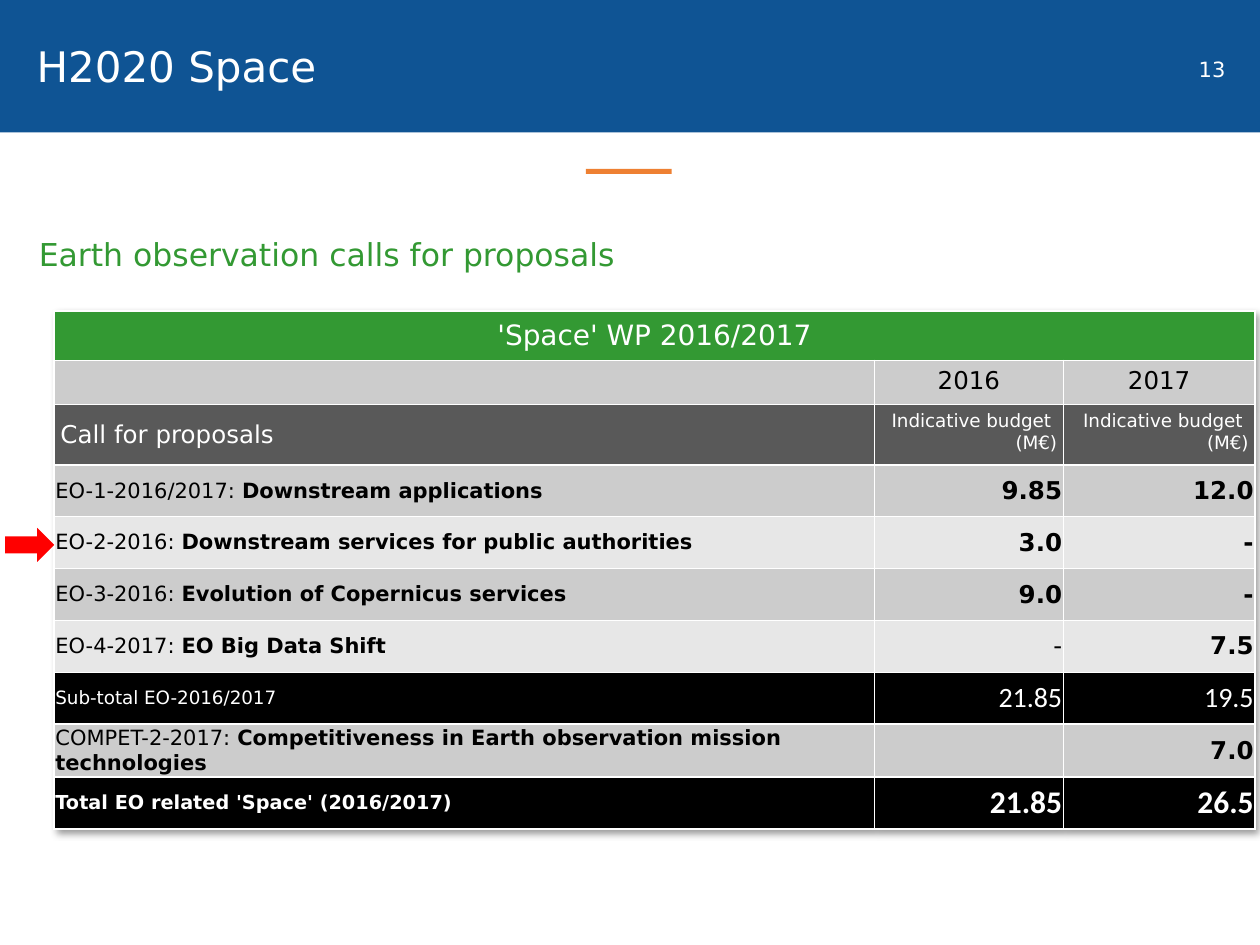
from dataclasses import dataclass

from lxml import etree
from pptx import Presentation
from pptx.dml.color import RGBColor
from pptx.enum.shapes import MSO_SHAPE
from pptx.enum.text import MSO_ANCHOR, PP_ALIGN
from pptx.oxml import parse_xml
from pptx.oxml.ns import nsdecls, qn
from pptx.util import Inches, Pt

LEFT, CENTER, RIGHT = PP_ALIGN.LEFT, PP_ALIGN.CENTER, PP_ALIGN.RIGHT
TOP, MIDDLE = MSO_ANCHOR.TOP, MSO_ANCHOR.MIDDLE
RECTANGLE, RIGHT_ARROW = MSO_SHAPE.RECTANGLE, MSO_SHAPE.RIGHT_ARROW

BLUE = RGBColor(0x0F, 0x54, 0x94)
ORANGE = RGBColor(0xEE, 0x80, 0x32)
GREEN = RGBColor(0x33, 0x99, 0x33)
RED = RGBColor(0xFF, 0x00, 0x00)
WHITE = RGBColor(0xFF, 0xFF, 0xFF)
BLACK = RGBColor(0x00, 0x00, 0x00)
DARK_GRAY = RGBColor(0x59, 0x59, 0x59)
MID_GRAY = RGBColor(0xCC, 0xCC, 0xCC)
LIGHT_GRAY = RGBColor(0xE7, 0xE7, 0xE7)

BODY_FONT = "DejaVu Sans"
NUMBER_FONT = "Calibri"
TABLE_HEIGHT = 4.1
HEADER_HEIGHTS = [0.39, 0.35, 0.48]
COLUMN_WIDTHS = [6.51, 1.5, 1.52]


@dataclass(frozen=True)
class Style:
    size: float
    color: RGBColor = BLACK
    bold: bool = False
    font: str = BODY_FONT


@dataclass(frozen=True)
class CellText:
    lines: tuple[tuple[tuple[str, Style], ...], ...] = ()
    align: PP_ALIGN = LEFT
    anchor: MSO_ANCHOR = MIDDLE
    margin: float = 0.01


@dataclass(frozen=True)
class TableRow:
    fill: RGBColor
    cells: tuple[CellText, ...]


PLAIN = Style(12)
STRONG = Style(12, bold=True)
VALUE = Style(14, bold=True)
SUBTOTAL = Style(16, WHITE, font=NUMBER_FONT)
TOTAL = Style(18, WHITE, True, NUMBER_FONT)


def header(text: str, style: Style, align: PP_ALIGN, anchor: MSO_ANCHOR = TOP) -> CellText:
    lines = tuple(((line, style),) for line in text.split("\n"))
    return CellText(lines, align, anchor, 0.05)


def label(*runs: tuple[str, Style]) -> CellText:
    return CellText((runs,))


def number(text: str, style: Style = VALUE) -> CellText:
    return CellText((((text, style),),), RIGHT)


def call(code: str, topic: str) -> CellText:
    return label((f"{code}: ", PLAIN), (topic, STRONG))


BUDGET = header("Indicative budget \n(M€)", Style(10.5, WHITE), RIGHT)
ROWS = [
    TableRow(GREEN, (header("'Space' WP 2016/2017", Style(16, WHITE), CENTER, MIDDLE),
                     CellText(), CellText())),
    TableRow(MID_GRAY, (CellText(), header("2016", Style(14), CENTER),
                        header("2017", Style(14), CENTER))),
    TableRow(DARK_GRAY, (header("Call for proposals", Style(14, WHITE), LEFT, MIDDLE),
                         BUDGET, BUDGET)),
    TableRow(MID_GRAY, (call("EO-1-2016/2017", "Downstream applications"),
                        number("9.85"), number("12.0"))),
    TableRow(LIGHT_GRAY, (call("EO-2-2016", "Downstream services for public authorities"),
                          number("3.0"), number("-"))),
    TableRow(MID_GRAY, (call("EO-3-2016", "Evolution of Copernicus services"),
                        number("9.0"), number("-"))),
    TableRow(LIGHT_GRAY, (call("EO-4-2017", "EO Big Data Shift"),
                          number("-", Style(14)), number("7.5"))),
    TableRow(BLACK, (label(("Sub-total EO-2016/2017", Style(10.5, WHITE))),
                     number("21.85", SUBTOTAL), number("19.5", SUBTOTAL))),
    TableRow(MID_GRAY, (call("COMPET-2-2017",
                             "Competitiveness in Earth observation mission technologies"),
                        CellText(), number("7.0"))),
    TableRow(BLACK, (label(("Total EO related 'Space' (2016/2017)", Style(11, WHITE, True))),
                     number("21.85", TOTAL), number("26.5", TOTAL))),
]


def place(shape, left: float, top: float, width: float, height: float) -> None:
    shape.left, shape.top = Inches(left), Inches(top)
    shape.width, shape.height = Inches(width), Inches(height)


def format_run(run, style: Style) -> None:
    run.font.name = style.font
    run.font.size = Pt(style.size)
    run.font.bold = style.bold
    run.font.color.rgb = style.color


def add_block(slide, kind: MSO_SHAPE, box: tuple[float, ...], color: RGBColor):
    shape = slide.shapes.add_shape(kind, *map(Inches, box))
    shape.shadow.inherit = False
    shape.fill.solid()
    shape.fill.fore_color.rgb = color
    shape.line.fill.background()
    return shape


def add_text(slide, text: str, box: tuple[float, ...], style: Style, align: PP_ALIGN) -> None:
    text_frame = slide.shapes.add_textbox(*map(Inches, box)).text_frame
    text_frame.word_wrap = True
    text_frame.text = text
    paragraph = text_frame.paragraphs[0]
    paragraph.alignment = align
    format_run(paragraph.runs[0], style)


def add_borders(cell, sides: list[str]) -> None:
    properties = cell._tc.get_or_add_tcPr()
    for index, side in enumerate(sides):
        line = etree.Element(qn(f"a:{side}"), w=str(Pt(1)))
        fill = etree.SubElement(line, qn("a:solidFill"))
        etree.SubElement(fill, qn("a:srgbClr"), val=str(WHITE))
        properties.insert(index, line)


def fill_cell(cell, content: CellText, fill: RGBColor) -> None:
    cell.fill.solid()
    cell.fill.fore_color.rgb = fill
    cell.vertical_anchor = content.anchor
    cell.margin_left = cell.margin_right = Inches(content.margin)
    cell.margin_top = cell.margin_bottom = Inches(content.margin)
    for index, runs in enumerate(content.lines):
        text_frame = cell.text_frame
        paragraph = text_frame.add_paragraph() if index else text_frame.paragraphs[0]
        paragraph.alignment = content.align
        for text, style in runs:
            run = paragraph.add_run()
            run.text = text
            format_run(run, style)


def add_budget_table(slide) -> None:
    frame = slide.shapes.add_table(
        len(ROWS), len(COLUMN_WIDTHS), Inches(0.43), Inches(2.47),
        Inches(sum(COLUMN_WIDTHS)), Inches(TABLE_HEIGHT))
    table = frame.table
    table.horz_banding = False
    shadow = parse_xml(
        f'<a:effectLst {nsdecls("a")}><a:outerShdw blurRad="50800" dist="38100" dir="2700000">'
        '<a:srgbClr val="000000"><a:alpha val="40000"/></a:srgbClr>'
        '</a:outerShdw></a:effectLst>')
    table._tbl.tblPr.insert(0, shadow)
    for column, width in zip(table.columns, COLUMN_WIDTHS):
        column.width = Inches(width)
    body_count = len(ROWS) - len(HEADER_HEIGHTS)
    body_height = (TABLE_HEIGHT - sum(HEADER_HEIGHTS)) / body_count
    heights = HEADER_HEIGHTS + [body_height] * body_count
    last_row, last_column = len(ROWS) - 1, len(COLUMN_WIDTHS) - 1
    for row_index, (row, height) in enumerate(zip(ROWS, heights)):
        table.rows[row_index].height = Inches(height)
        for column_index, content in enumerate(row.cells):
            cell = table.cell(row_index, column_index)
            fill_cell(cell, content, row.fill)
            inner = {"lnL": column_index > 0, "lnR": column_index < last_column,
                     "lnT": row_index > 0, "lnB": row_index < last_row}
            if row_index == 0:
                inner["lnL"] = inner["lnR"] = False
            add_borders(cell, [side for side, drawn in inner.items() if drawn])
    table.cell(0, 0).merge(table.cell(0, last_column))


def format_title(slide) -> None:
    title = slide.shapes.title
    place(title, 0, 0, 4.27, 1.05)
    text_frame = title.text_frame
    text_frame.text = "H2020 Space"
    text_frame.vertical_anchor = MIDDLE
    text_frame.margin_left = Inches(0.29)
    paragraph = text_frame.paragraphs[0]
    paragraph.alignment = LEFT
    format_run(paragraph.runs[0], Style(24, WHITE))


def main() -> None:
    presentation = Presentation()
    presentation.slide_width, presentation.slide_height = Inches(10), Inches(7.5)
    slide = presentation.slides.add_slide(presentation.slide_layouts[5])
    banner = add_block(slide, RECTANGLE, (0, 0, 10, 1.05), BLUE)
    slide.shapes.title._element.addprevious(banner._element)
    format_title(slide)
    add_block(slide, RECTANGLE, (4.65, 1.34, 0.68, 0.04), ORANGE)
    add_text(slide, "13", (9.24, 0.4, 0.76, 0.3), Style(12, WHITE), CENTER)
    add_budget_table(slide)
    add_text(slide, "Earth observation calls for proposals", (0.21, 1.82, 9.53, 0.4),
             Style(18, GREEN), LEFT)
    add_block(slide, RIGHT_ARROW, (0.04, 4.19, 0.39, 0.27), RED)
    presentation.save("out.pptx")


if __name__ == "__main__":
    main()
